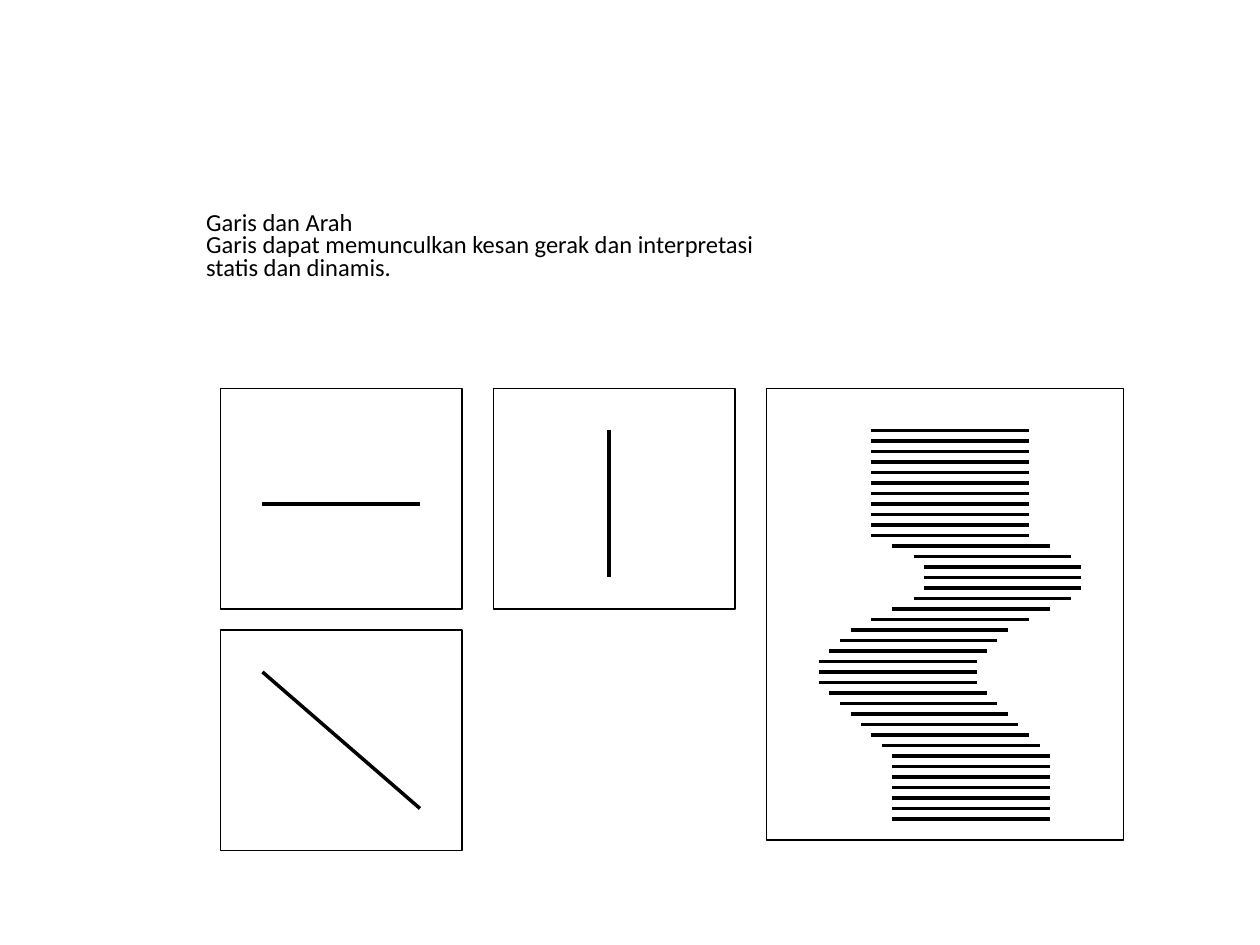
import pptx
import pptx.dml.color
import pptx.enum.shapes
import pptx.enum.text
import pptx.util
from lxml import etree

PX = 9525
STEP = 8
COLORS = {"ink": "000000"}
FONT = "Calibri"
BODY_LINES = [
    "Garis dan Arah",
    "Garis dapat memunculkan kesan gerak dan interpretasi",
    "statis dan dinamis.",
]
FRAMES = [
    (168, 296, 184, 168),
    (168, 480, 184, 168),
    (376, 296, 184, 168),
    (584, 296, 272, 344),
]
DIRECTIONS = [
    (464, 328, 464, 440),
    (200, 384, 320, 384),
    (200, 512, 320, 616),
]
WAVE_LEFT, WAVE_TOP, WAVE_WIDTH = 624, 328, 120
WAVE_SHIFTS = (
    [5] * 11 + [7, 9, 10, 10, 10, 9, 7, 5, 3, 2, 1, 0, 0]
    + list(range(7)) + [7] * 7
)


def px(length):
    """Turn pixels into EMU."""
    return pptx.util.Emu(length * PX)


def ink():
    """Return the colour of text and lines."""
    return pptx.dml.color.RGBColor.from_string(COLORS["ink"])


def fill_body(body):
    """Place the body and write its lines without bullets."""
    body.left, body.top, body.width, body.height = map(px, (152, 160, 688, 136))
    frame = body.text_frame
    frame.word_wrap = True
    frame.auto_size = pptx.enum.text.MSO_AUTO_SIZE.NONE
    frame.vertical_anchor = pptx.enum.text.MSO_ANCHOR.TOP
    frame.margin_left = frame.margin_right = px(5)
    frame.margin_top = frame.margin_bottom = px(5)
    for index, line in enumerate(BODY_LINES):
        paragraph = frame.paragraphs[0] if index == 0 else frame.add_paragraph()
        properties = paragraph._p.get_or_add_pPr()
        properties.set("marL", str(px(64)))
        properties.set("indent", str(px(-64)))
        etree.SubElement(properties, pptx.oxml.ns.qn("a:buNone"))
        paragraph.alignment = pptx.enum.text.PP_ALIGN.LEFT
        paragraph.line_spacing = 0.64
        paragraph.space_before = pptx.util.Pt(2 if index else 0)
        run = paragraph.add_run()
        run.text = line
        run.font.name = FONT
        run.font.size = pptx.util.Pt(14)
        run.font.color.rgb = ink()


def add_frame(slide, left, top, width, height):
    """Add an unfilled panel with a thin outline."""
    panel = slide.shapes.add_shape(
        pptx.enum.shapes.MSO_SHAPE.RECTANGLE, *map(px, (left, top, width, height))
    )
    panel.shadow.inherit = False
    panel.fill.background()
    panel.line.color.rgb = ink()
    panel.line.width = pptx.util.Pt(0.75)


def add_stroke(slide, x1, y1, x2, y2):
    """Add a thick straight line."""
    stroke = slide.shapes.add_connector(
        pptx.enum.shapes.MSO_CONNECTOR.STRAIGHT, *map(px, (x1, y1, x2, y2))
    )
    stroke.line.color.rgb = ink()
    stroke.line.width = pptx.util.Pt(2)
    etree.SubElement(stroke._element.spPr, pptx.oxml.ns.qn("a:effectLst"))


def add_wave(slide):
    """Stack equal lines whose shifts form a wave."""
    for row, shift in enumerate(WAVE_SHIFTS):
        left = WAVE_LEFT + shift * STEP
        y = WAVE_TOP + row * STEP
        add_stroke(slide, left, y, left + WAVE_WIDTH, y)


def main():
    """Build and save the slide."""
    presentation = pptx.Presentation()
    presentation.slide_width, presentation.slide_height = px(960), px(720)
    slide = presentation.slides.add_slide(presentation.slide_layouts[1])
    title = slide.shapes.title._element
    title.getparent().remove(title)
    fill_body(slide.placeholders[1])
    for panel in FRAMES:
        add_frame(slide, *panel)
    for direction in DIRECTIONS:
        add_stroke(slide, *direction)
    add_wave(slide)
    presentation.save("out.pptx")


if __name__ == "__main__":
    main()
